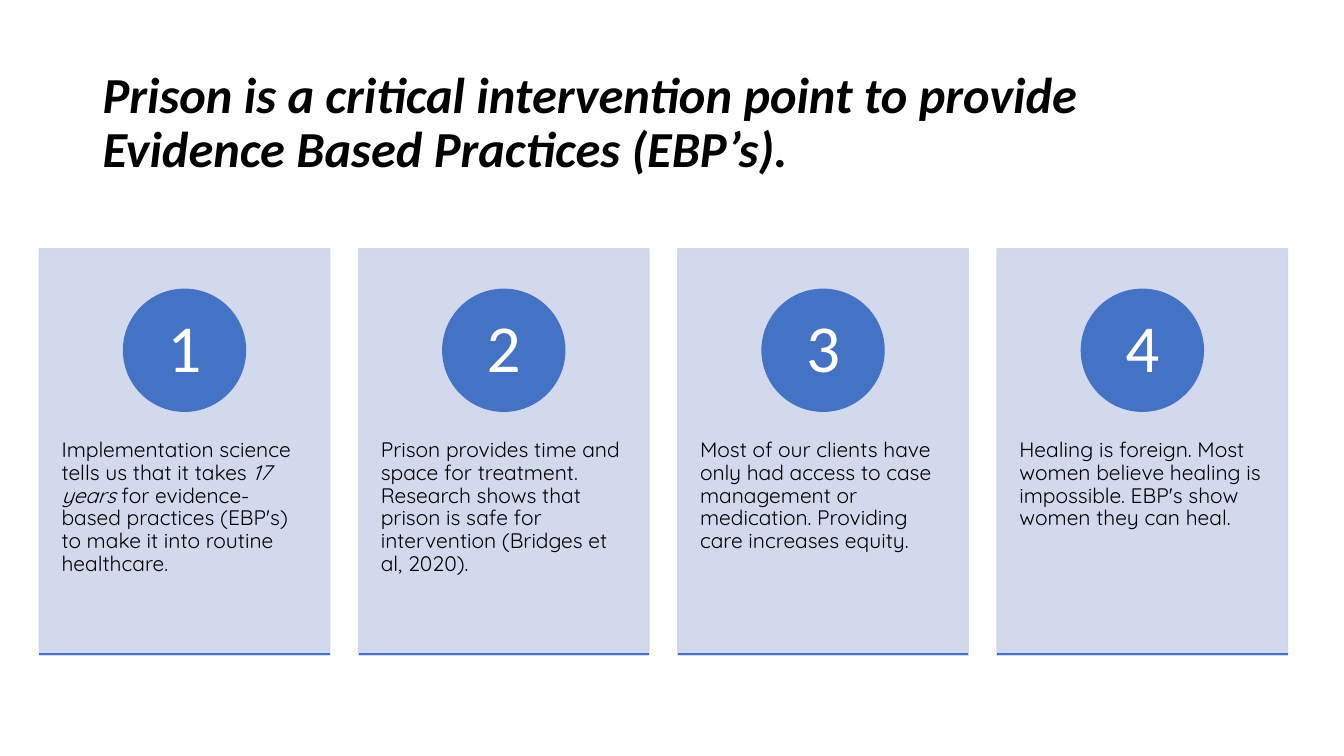
from lxml import etree
from pptx import Presentation
from pptx.dml.color import RGBColor
from pptx.enum.shapes import MSO_CONNECTOR, MSO_SHAPE
from pptx.enum.text import MSO_ANCHOR, PP_ALIGN
from pptx.oxml.ns import qn
from pptx.util import Inches, Pt

BLACK = RGBColor(0x00, 0x00, 0x00)
WHITE = RGBColor(0xFF, 0xFF, 0xFF)
BLUE = RGBColor(0x44, 0x72, 0xC4)
PALE = RGBColor(0xCF, 0xD5, 0xEA)

TITLE = "Prison is a critical intervention point to provide Evidence Based Practices (EBP’s)."
CARDS = [
    [("Implementation science tells us that it takes ", False), ("17 years ", True),
     ("for evidence-based practices (EBP's) to make it into routine healthcare.", False)],
    [("Prison provides time and space for treatment. Research shows that prison is safe "
      "for intervention (Bridges et al, 2020).", False)],
    [("Most of our clients have only had access to case management or medication. "
      "Providing care increases equity.", False)],
    [("Healing is foreign. Most women believe healing is impossible. "
      "EBP's show women they can heal. ", False)],
]
LEFT, TOP, WIDTH, HEIGHT = 0.39, 2.47, 2.88, 4.03
PITCH = 9.5 / 3
CIRCLE = 1.21


def write(sp, runs, size, font, color=BLACK, bold=False, align=PP_ALIGN.LEFT,
          anchor=MSO_ANCHOR.TOP, inset=(0.1, 0.05)):
    """Write (text, italic) runs as one formatted paragraph in a shape."""
    tf = sp.text_frame
    tf.word_wrap = True
    tf.vertical_anchor = anchor
    tf.margin_left = tf.margin_right = Inches(inset[0])
    tf.margin_top = tf.margin_bottom = Inches(inset[1])
    p = tf.paragraphs[0]
    p.alignment = align
    p.line_spacing = 0.9
    for text, italic in runs:
        r = p.add_run()
        r.text = text
        r.font.size = Pt(size)
        r.font.name = font
        r.font.bold = bold
        r.font.italic = italic
        r.font.color.rgb = color


def add_text(s, x, y, w, h, runs, **fmt):
    """Add a text box."""
    sp = s.shapes.add_textbox(Inches(x), Inches(y), Inches(w), Inches(h))
    write(sp, runs, **fmt)


def add_block(s, kind, x, y, w, h, color, opacity=100):
    """Add a preset shape with matching fill and outline."""
    sp = s.shapes.add_shape(kind, Inches(x), Inches(y), Inches(w), Inches(h))
    sp.shadow.inherit = False
    sp.fill.solid()
    sp.fill.fore_color.rgb = color
    sp.line.color.rgb = color
    sp.line.width = Pt(1)
    if opacity < 100:
        for clr in sp._element.spPr.iter(qn("a:srgbClr")):
            etree.SubElement(clr, qn("a:alpha"), val=str(opacity * 1000))
    return sp


def add_rule(s, x, y, w):
    """Add a horizontal blue line."""
    line = s.shapes.add_connector(MSO_CONNECTOR.STRAIGHT, Inches(x), Inches(y),
                                  Inches(x + w), Inches(y))
    line.line.color.rgb = BLUE
    line.line.width = Pt(1)
    etree.SubElement(line._element.spPr, qn("a:effectLst"))


def add_card(s, number, runs):
    """Add one numbered card with its text and base line."""
    x = LEFT + (number - 1) * PITCH
    add_block(s, MSO_SHAPE.RECTANGLE, x, TOP, WIDTH, HEIGHT, PALE, opacity=90)
    add_text(s, x, 4, WIDTH, 2.42, runs, size=15, font="Quicksand", inset=(0.22, 0.36))
    circle = add_block(s, MSO_SHAPE.OVAL, x + (WIDTH - CIRCLE) / 2, 2.87,
                       CIRCLE, CIRCLE, BLUE)
    write(circle, [(str(number), False)], size=48, font="Calibri", color=WHITE,
          align=PP_ALIGN.CENTER, anchor=MSO_ANCHOR.MIDDLE, inset=(0.09, 0.01))
    add_rule(s, x, 6.49, WIDTH)


def main():
    """Build the slide and save it."""
    prs = Presentation()
    prs.slide_width = Inches(13.33)
    prs.slide_height = Inches(7.5)
    s = prs.slides.add_slide(prs.slide_layouts[6])
    add_text(s, 0.92, 0.61, 11.5, 1.24, [(TITLE, True)], size=36, font="Calibri",
             bold=True, anchor=MSO_ANCHOR.MIDDLE)
    for number, runs in enumerate(CARDS, 1):
        add_card(s, number, runs)
    prs.save("out.pptx")


if __name__ == "__main__":
    main()
